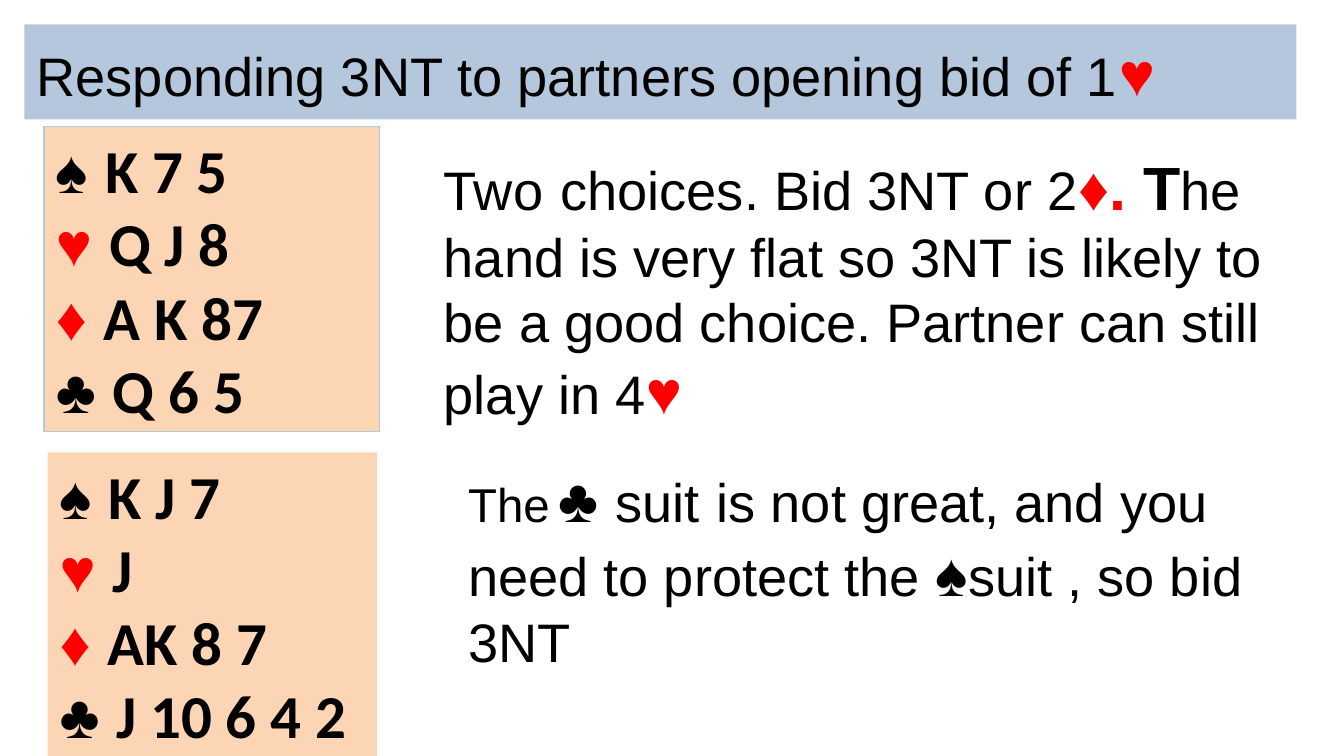
import dataclasses

import pptx
import pptx.dml.color
import pptx.enum.shapes
import pptx.enum.text
import pptx.util

Inches = pptx.util.Inches
Anchor = pptx.enum.text.MSO_ANCHOR
Align = pptx.enum.text.PP_ALIGN


@dataclasses.dataclass(frozen=True)
class Theme:
    black: str = "000000"
    red: str = "FF0000"
    band: str = "B4C7DC"
    hand: str = "FCD5B5"
    body_size: int = 32
    suit_size: int = 36
    lead_size: int = 28
    gap_size: int = 18
    body_font: str = "Arial"
    card_font: str = "Calibri"


THEME = Theme()
BODY = {"size": THEME.body_size}
LEAD = {"size": THEME.lead_size}
GAP = {"size": THEME.gap_size}
SUIT = {"size": THEME.suit_size, "bold": True}
PLAIN_SUIT = {"size": THEME.suit_size}
RED_SUIT = {**SUIT, "color": THEME.red}
CARDS = {**SUIT, "font": THEME.card_font}

TITLE = [("Responding 3NT to partners opening bid of 1", BODY), ("♥", RED_SUIT)]
TITLE_AREA = (0.2, 0.2, 10.43, 0.78)

SUITS = [("♠ ", PLAIN_SUIT), ("♥ ", RED_SUIT), ("♦ ", RED_SUIT), ("♣ ", SUIT)]
HANDS = [
    {"area": (0.36, 1.04, 2.75, 2.5), "cards": ["K 7 5", "Q J 8", "A K 87", "Q 6 5"],
     "outline": THEME.band},
    {"area": (0.39, 3.71, 2.7, 2.5), "cards": ["K J 7", "J", "AK 8 7", "J 10 6 4 2"],
     "outline": None},
]

ADVICE = [
    ((3.54, 1.18, 7.08, 2.31), [
        ("Two", BODY), (" ", SUIT), ("choices. Bid 3NT or 2", BODY),
        ("♦. ", RED_SUIT), ("Τ", SUIT),
        ("he hand is very flat so 3NT is likely to be a good choice. "
         "Partner can still play in 4", BODY),
        ("♥", RED_SUIT),
    ]),
    ((3.74, 3.74, 6.88, 1.93), [
        ("The", LEAD), (" ", GAP), ("♣ ", SUIT), ("suit", BODY), (" ", SUIT),
        ("is not great, and you need to protect the ", BODY),
        ("♠", PLAIN_SUIT), ("suit , so bid 3NT", BODY),
    ]),
]


def rgb(color):
    """Turn a hex string into a colour."""
    return pptx.dml.color.RGBColor.from_string(color)


def paint(box, color):
    """Fill a box with one colour."""
    box.fill.solid()
    box.fill.fore_color.rgb = rgb(color)


def add_span(para, text, size, bold=False, color=THEME.black, font=THEME.body_font):
    """Add one formatted run to a paragraph."""
    span = para.add_run()
    span.text = text
    span.font.size = pptx.util.Pt(size)
    span.font.bold = bold
    span.font.name = font
    span.font.color.rgb = rgb(color)


def write(box, lines, anchor=Anchor.TOP):
    """Write lines of formatted runs into a box."""
    frame = box.text_frame
    frame.word_wrap = True
    frame.auto_size = pptx.enum.text.MSO_AUTO_SIZE.NONE
    frame.vertical_anchor = anchor
    for index, line in enumerate(lines):
        para = frame.add_paragraph() if index else frame.paragraphs[0]
        para.alignment = Align.LEFT
        for text, style in line:
            add_span(para, text, **style)


def add_hand(page, area, cards, outline):
    """Add a panel that lists one hand by suit."""
    box = page.shapes.add_shape(
        pptx.enum.shapes.MSO_SHAPE.RECTANGLE, *map(Inches, area))
    box.shadow.inherit = False
    paint(box, THEME.hand)
    if outline:
        box.line.color.rgb = rgb(outline)
        box.line.width = 0
    else:
        box.line.fill.background()
    write(box, [[suit, (held, CARDS)] for suit, held in zip(SUITS, cards)])


def main():
    """Build the bidding slide."""
    deck = pptx.Presentation()
    deck.slide_width, deck.slide_height = Inches(11.02), Inches(6.2)
    page = deck.slides.add_slide(deck.slide_layouts.get_by_name("Title Only"))

    title = page.shapes.title
    title.left, title.top, title.width, title.height = map(Inches, TITLE_AREA)
    paint(title, THEME.band)
    write(title, [TITLE], anchor=Anchor.MIDDLE)

    for hand in HANDS:
        add_hand(page, **hand)
    for area, line in ADVICE:
        write(page.shapes.add_textbox(*map(Inches, area)), [line])

    deck.save("out.pptx")


if __name__ == "__main__":
    main()
